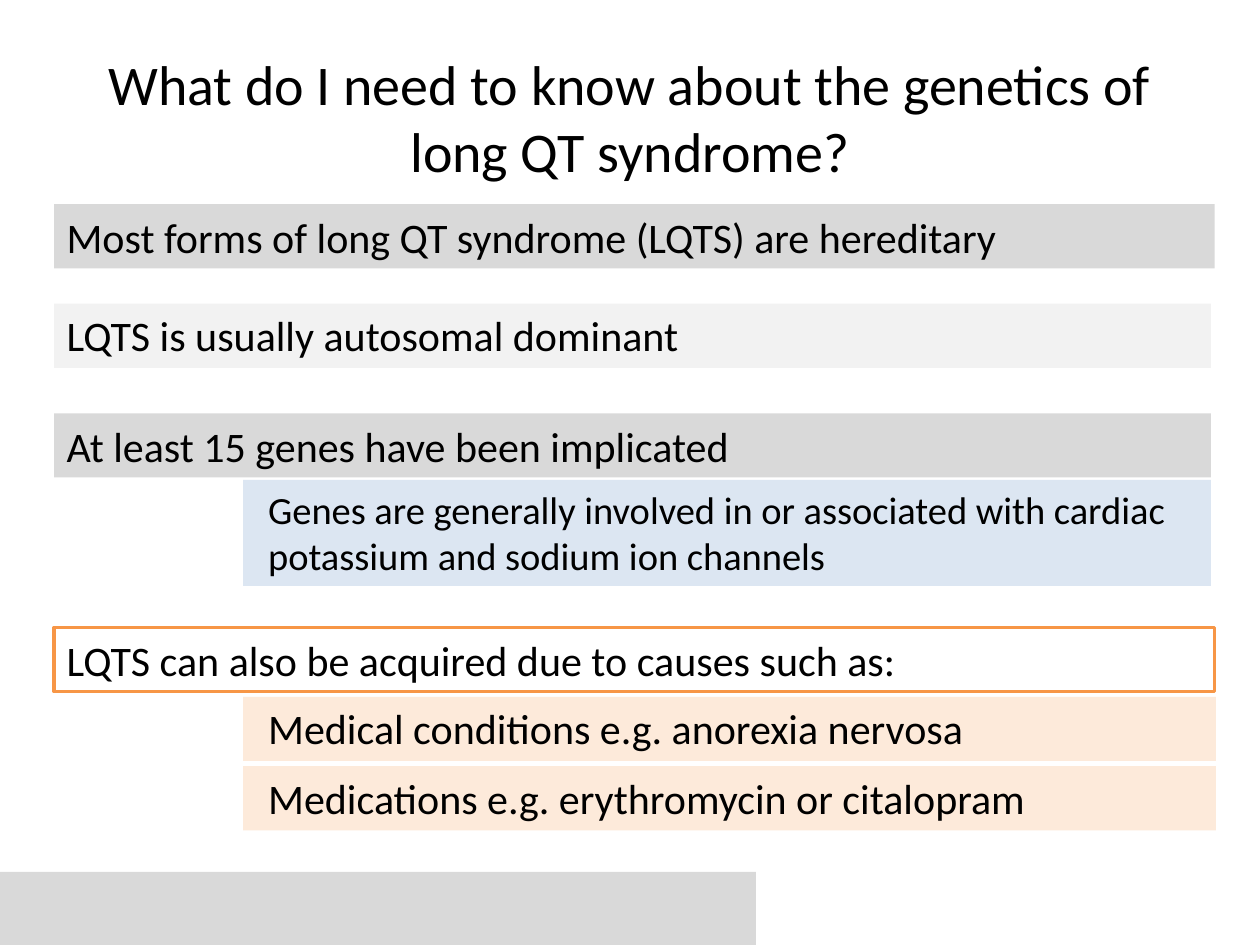
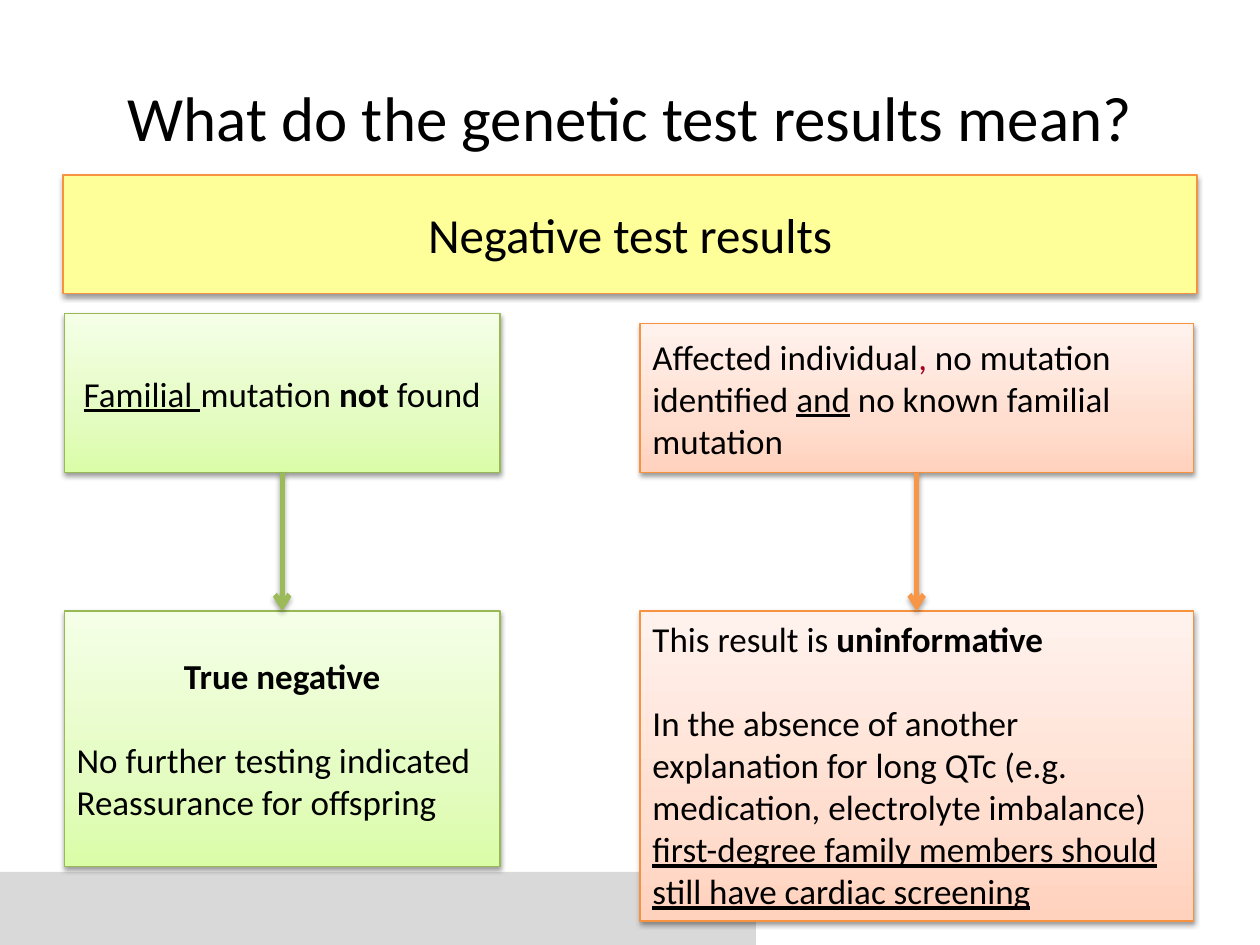
"""Build two slides on the genetics of long QT syndrome."""
import copy
import dataclasses
import typing

import pptx
import pptx.dml.color
import pptx.enum.shapes
import pptx.enum.text
import pptx.oxml
import pptx.oxml.ns
import pptx.util

WIDE, HIGH = pptx.util.Inches(10), pptx.util.Inches(7.5)
COL, ROW = WIDE / 100, HIGH / 75
FONT, INK = "Calibri", "000000"
GREY, PALE, BLUE, PEACH = "D9D9D9", "F2F2F2", "DCE6F2", "FDEADA"
WHITE, GOLD, RED = "FFFFFF", "FFFF99", "A50021"
ORANGE, AMBER, GREEN, OLIVE = "F79646", "F69240", "9BBB59", "98B955"
LIME = ("DAFDA7", "E4FCC2", "F5FFE7")
ROSE = ("FFD2BD", "FFDED0", "FFF2ED")
STOPS = (0, 0.35, 1)
LEFT = pptx.enum.text.PP_ALIGN.LEFT
MID = pptx.enum.text.PP_ALIGN.CENTER
TOP = pptx.enum.text.MSO_ANCHOR.TOP
HALF = pptx.enum.text.MSO_ANCHOR.MIDDLE


class Run(typing.NamedTuple):
    text: str
    bold: bool = False
    under: bool = False
    ink: str = INK


@dataclasses.dataclass
class Para:
    runs: typing.Sequence[Run]
    size: float = 20
    align: typing.Any = LEFT
    indent: float = 0
    before: float = 0


@dataclasses.dataclass
class Box:
    left: float
    top: float
    wide: float
    high: float
    fill: typing.Any
    paras: typing.Sequence[Para] = ()
    edge: str = ""
    weight: float = 0.75
    anchor: typing.Any = HALF
    shade: bool = False


def tint(code: str) -> pptx.dml.color.RGBColor:
    return pptx.dml.color.RGBColor.from_string(code)


def place(left: float, top: float, wide: float, high: float) -> tuple:
    return int(left * COL), int(top * ROW), int(wide * COL), int(high * ROW)


def shade(item: typing.Any, alpha: int, dist: float) -> None:
    space = pptx.oxml.ns.nsdecls("a")
    blur, gap = pptx.util.Pt(3.1), pptx.util.Pt(dist)
    item._element.spPr.append(pptx.oxml.parse_xml(
        f'<a:effectLst {space}><a:outerShdw blurRad="{blur}" dist="{gap}" '
        f'dir="5400000" rotWithShape="0"><a:srgbClr val="{INK}">'
        f'<a:alpha val="{alpha * 1000}"/></a:srgbClr></a:outerShdw></a:effectLst>'))


def blend(shape: typing.Any, codes: typing.Sequence[str]) -> None:
    shape.fill.gradient()
    shape.fill.gradient_angle = 90
    stops = shape._element.spPr.find(".//" + pptx.oxml.ns.qn("a:gsLst"))
    stops.append(copy.deepcopy(stops[0]))
    for stop, code, spot in zip(shape.fill.gradient_stops, codes, STOPS):
        stop.color.rgb = tint(code)
        stop.position = spot


def write(frame: typing.Any, paras: typing.Sequence[Para], anchor: typing.Any) -> None:
    frame.word_wrap = True
    frame.vertical_anchor = anchor
    for index, para in enumerate(paras):
        line = frame.add_paragraph() if index else frame.paragraphs[0]
        line.alignment = para.align
        if para.indent:
            line._p.get_or_add_pPr().set("marL", str(int(para.indent * COL)))
        if para.before:
            line.space_before = pptx.util.Pt(para.before)
        font = line.font
        font.name, font.size = FONT, pptx.util.Pt(para.size)
        font.color.rgb = tint(INK)
        same = all(run.bold for run in para.runs)
        font.bold = same
        for run in para.runs:
            part = line.add_run()
            part.text = run.text
            if run.bold and not same:
                part.font.bold = True
            if run.under:
                part.font.underline = True
            if run.ink != INK:
                part.font.color.rgb = tint(run.ink)


def draw(slide: typing.Any, box: Box) -> typing.Any:
    shape = slide.shapes.add_shape(
        pptx.enum.shapes.MSO_SHAPE.RECTANGLE,
        *place(box.left, box.top, box.wide, box.high))
    if isinstance(box.fill, str):
        shape.fill.solid()
        shape.fill.fore_color.rgb = tint(box.fill)
    else:
        blend(shape, box.fill)
    if box.edge:
        shape.line.color.rgb = tint(box.edge)
        shape.line.width = pptx.util.Pt(box.weight)
    else:
        shape.line.fill.background()
    if box.shade:
        shade(shape, 38, 1.6)
    else:
        shape.shadow.inherit = False
    if box.paras:
        write(shape.text_frame, box.paras, box.anchor)
    return shape


def link(slide: typing.Any, start: typing.Any, end: typing.Any, code: str) -> None:
    arrow = slide.shapes.add_connector(
        pptx.enum.shapes.MSO_CONNECTOR.STRAIGHT, 0, 0, 0, 0)
    arrow.begin_connect(start, 2)
    arrow.end_connect(end, 0)
    arrow.line.color.rgb = tint(code)
    arrow.line.width = pptx.util.Pt(3)
    space = pptx.oxml.ns.nsdecls("a")
    arrow.line._get_or_add_ln().append(
        pptx.oxml.parse_xml(f'<a:tailEnd {space} type="arrow"/>'))
    shade(arrow, 35, 1.8)


def start(deck: typing.Any, text: str, size: float) -> typing.Any:
    slide = deck.slides.add_slide(deck.slide_layouts[5])
    title = slide.shapes.title
    title.left, title.top, title.width, title.height = place(5, 3, 90, 12.5)
    write(title.text_frame, [Para([Run(text)], size, MID)], HALF)
    return slide


def band(deck: typing.Any, slide: typing.Any) -> None:
    shape = draw(slide, Box(0, 69.2, 60, 5.8, GREY))
    deck.slide_master.shapes._spTree.append(shape._element)


def bar(top: float, wide: float, fill: str, text: str, **more: typing.Any) -> Box:
    return Box(4.3, top, wide, 5.1, fill, [Para([Run(text)], 24)], **more)


def note(top: float, wide: float, high: float, fill: str, text: str, size: float) -> Box:
    return Box(19.3, top, wide, high, fill,
               [Para([Run(text)], size, indent=1)], anchor=TOP)


def facts(deck: typing.Any) -> None:
    slide = start(
        deck, "What do I need to know about the genetics of long QT syndrome?", 32)
    band(deck, slide)
    for box in (
        bar(16.2, 92.1, GREY, "Most forms of long QT syndrome (LQTS) are hereditary"),
        bar(24.1, 91.8, PALE, "LQTS is usually autosomal dominant", anchor=TOP),
        bar(49.8, 92.1, WHITE, "LQTS can also be acquired due to causes such as:",
            edge=ORANGE, weight=2),
        note(55.3, 77.2, 5.1, PEACH, "Medical conditions e.g. anorexia nervosa", 24),
        note(60.8, 77.2, 5.1, PEACH, "Medications e.g. erythromycin or citalopram", 24),
        bar(32.8, 91.8, GREY, "At least 15 genes have been implicated"),
        note(38.1, 76.8, 8.4, BLUE, "Genes are generally involved in or associated "
             "with cardiac potassium and sodium ion channels", 22),
    ):
        draw(slide, box)


def lime(top: float, high: float, paras: typing.Sequence[Para]) -> Box:
    return Box(5.1, top, 34.6, high, LIME, paras, OLIVE, shade=True)


def rose(top: float, high: float, paras: typing.Sequence[Para],
         anchor: typing.Any = HALF) -> Box:
    return Box(50.8, top, 43.9, high, ROSE, paras, AMBER, anchor=anchor, shade=True)


def tests(deck: typing.Any) -> None:
    slide = start(deck, "What do the genetic test results mean?", 36)
    draw(slide, Box(5, 13.9, 90, 9.4, GOLD,
                    [Para([Run("Negative test results")], 28, MID)],
                    AMBER, shade=True))
    absent = lime(24.9, 12.6, [Para([
        Run("Familial ", under=True), Run("mutation "),
        Run("not", bold=True), Run(" found")], align=MID)])
    unknown = rose(25.7, 11.8, [Para([
        Run("Affected individual"), Run(",", ink=RED),
        Run(" no mutation identified "), Run("and", under=True),
        Run(" no known familial mutation")])])
    clear = lime(48.5, 20.3, [
        Para([Run("True negative", bold=True)], align=MID),
        Para([Run("No further testing indicated")], before=24),
        Para([Run("Reassurance for offspring")])])
    vague = rose(48.5, 24.6, [
        Para([Run("This result is "), Run("uninformative", bold=True)]),
        Para([Run("In the absence of another explanation for long QTc "
                  "(e.g. medication, electrolyte imbalance) "),
              Run("first-degree family members should still have cardiac screening",
                  under=True)], before=24)], TOP)
    for cause, result, code in ((absent, clear, GREEN), (unknown, vague, ORANGE)):
        link(slide, draw(slide, cause), draw(slide, result), code)


def main() -> None:
    deck = pptx.Presentation()
    deck.slide_width, deck.slide_height = WIDE, HIGH
    facts(deck)
    tests(deck)
    deck.save("out.pptx")


if __name__ == "__main__":
    main()
